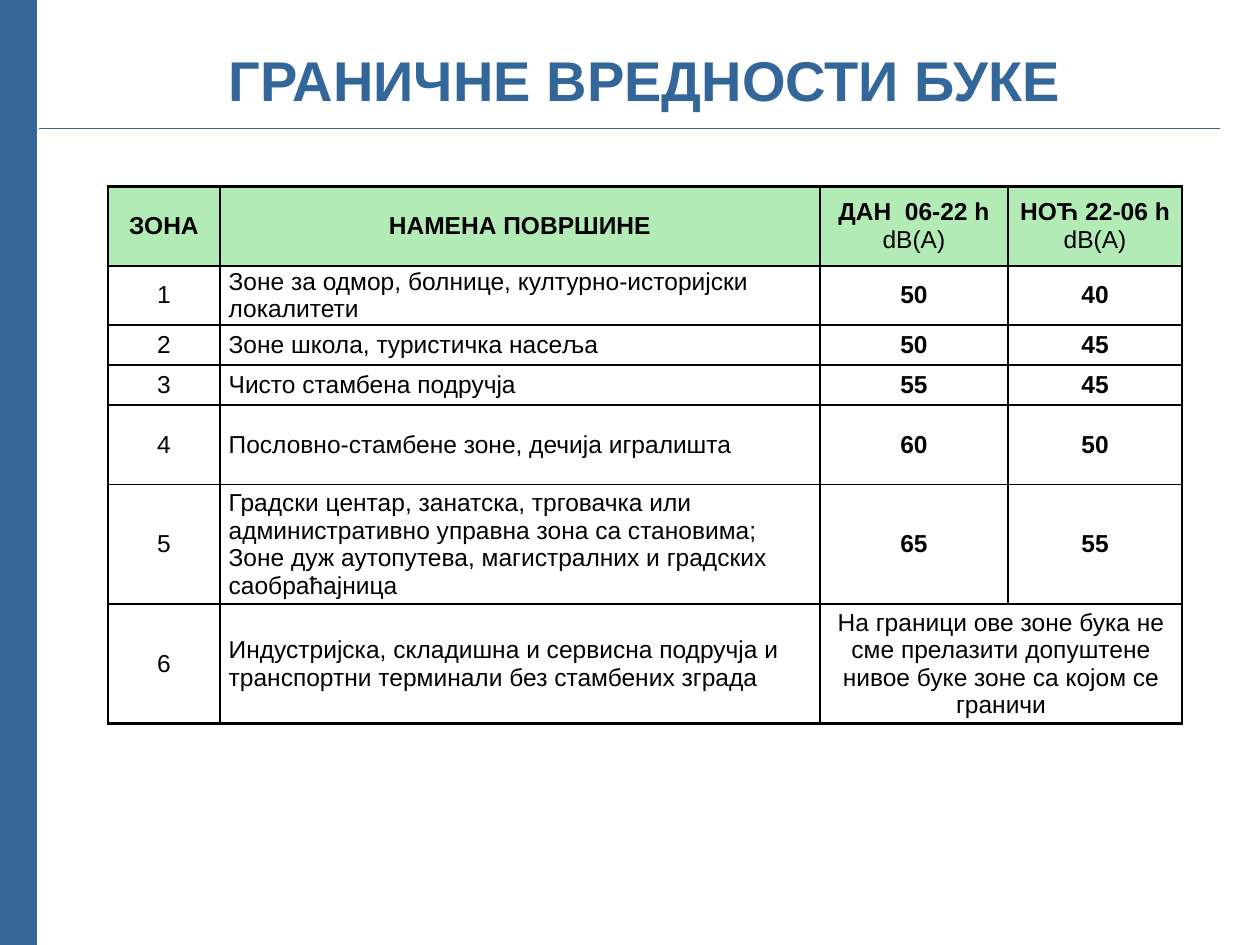
from dataclasses import dataclass

from lxml.etree import SubElement
from pptx import Presentation
from pptx.dml.color import RGBColor
from pptx.enum.shapes import MSO_CONNECTOR as Connector
from pptx.enum.text import MSO_ANCHOR as Anchor, PP_ALIGN as Align
from pptx.oxml import parse_xml
from pptx.oxml.ns import nsdecls, qn
from pptx.util import Cm, Pt


@dataclass(frozen=True)
class Theme:
    font: str = "Arial"
    accent: str = "336699"
    header: str = "B3EBB6"
    ink: str = "000000"
    title_size: float = 32
    table_size: float = 14
    rule: float = 0.75
    bar: float = 40
    inner_border: float = 1
    outer_border: float = 1.5


class NoisePage:
    def __init__(self, deck, theme):
        self.theme = theme
        self.page = deck.slides.add_slide(deck.slide_layouts[6])

    def style(self, para, size, color, bold, align=Align.CENTER):
        para.alignment = align
        font = para.font
        font.name, font.size, font.bold = self.theme.font, Pt(size), bold
        font.color.rgb = RGBColor.from_string(color)

    def title(self, text, left, top, width, height):
        box = self.page.shapes.add_textbox(Cm(left), Cm(top), Cm(width), Cm(height))
        frame = box.text_frame
        frame.word_wrap = True
        frame.vertical_anchor = Anchor.MIDDLE
        frame.text = text
        self.style(frame.paragraphs[0], self.theme.title_size, self.theme.accent, True)

    def line(self, x1, y1, x2, y2, width):
        line = self.page.shapes.add_connector(
            Connector.STRAIGHT, Cm(x1), Cm(y1), Cm(x2), Cm(y2))
        line.line.color.rgb = RGBColor.from_string(self.theme.accent)
        line.line.width = Pt(width)
        SubElement(line._element.spPr, qn("a:effectLst"))

    def borders(self, cell, outer_sides):
        properties = cell._tc.get_or_add_tcPr()
        for position, side in enumerate("LRTB"):
            width = self.theme.outer_border if side in outer_sides else self.theme.inner_border
            properties.insert(position, parse_xml(
                f'<a:ln{side} {nsdecls("a")} w="{Pt(width)}"><a:solidFill>'
                f'<a:srgbClr val="{self.theme.ink}"/></a:solidFill></a:ln{side}>'))

    def cell(self, cell, lines, bold_lines, align):
        cell.vertical_anchor = Anchor.MIDDLE
        cell.margin_left = cell.margin_right = Cm(0.18)
        cell.margin_top = cell.margin_bottom = 0
        cell.text_frame.text = "\n".join(lines)
        for number, para in enumerate(cell.text_frame.paragraphs):
            self.style(para, self.theme.table_size, self.theme.ink,
                       number < bold_lines, align)

    def table(self, rows, left, top, widths, heights, merged):
        table = self.page.shapes.add_table(
            len(heights), len(widths), Cm(left), Cm(top),
            Cm(sum(widths)), Cm(sum(heights))).table
        table.first_row = table.horz_banding = False
        for column, width in zip(table.columns, widths):
            column.width = Cm(width)
        for row, height in zip(table.rows, heights):
            row.height = Cm(height)
        start, end = merged
        table.cell(*start).merge(table.cell(*end))

        last_row, last_column = len(heights) - 1, len(widths) - 1
        for r, row in enumerate(rows):
            for c, text in enumerate(row):
                cell = table.cell(r, c)
                # Only the first line of the header and the levels are bold
                bold = r == 0 or (c >= 2 and not cell.is_merge_origin)
                align = Align.LEFT if r and c == 1 else Align.CENTER
                self.cell(cell, text.split("\n"), int(bold), align)
                if r == 0:
                    cell.fill.solid()
                    cell.fill.fore_color.rgb = RGBColor.from_string(self.theme.header)
                else:
                    cell.fill.background()
                right = c + (cell.span_width if cell.is_merge_origin else 1) - 1
                edges = {"L": c == 0, "R": right == last_column,
                         "T": r == 0, "B": r == last_row}
                self.borders(cell, [side for side, outer in edges.items() if outer])
        self.borders(table.cell(*end), "RB")


ROWS = [
    ("ЗОНА", "НАМЕНА ПОВРШИНЕ", "ДАН  06-22 h\ndB(A)", "НОЋ 22-06 h\ndB(A)"),
    ("1", "Зоне за одмор, болнице, културно-историјски локалитети", "50", "40"),
    ("2", "Зоне школа, туристичка насеља", "50", "45"),
    ("3", "Чисто стамбена подручја", "55", "45"),
    ("4", "Пословно-стамбене зоне, дечија игралишта", "60", "50"),
    ("5", "Градски центар, занатска, трговачка или административно управна зона "
          "са становима; Зоне дуж аутопутева, магистралних и градских саобраћајница",
     "65", "55"),
    ("6", "Индустријска, складишна и сервисна подручја и транспортни терминали "
          "без стамбених зграда",
     "На граници ове зоне бука не сме прелазити допуштене нивое буке зоне "
     "са којом се граничи"),
]


def main():
    deck = Presentation()
    deck.slide_width, deck.slide_height = Cm(25.4), Cm(19.05)
    theme = Theme()
    noise = NoisePage(deck, theme)

    # Title, side bar and rule
    noise.title("ГРАНИЧНЕ ВРЕДНОСТИ БУКЕ", 1.19, 0, 23.62, 3.18)
    noise.line(0.05, 0, 0.05, 19.05, theme.bar)
    noise.line(0.79, 2.59, 24.59, 2.59, theme.rule)

    # Limits by zone
    noise.table(ROWS, 2.18, 3.76,
                widths=[2.25, 12.1, 3.79, 3.51],
                heights=[1.6, 0.89, 0.81, 0.81, 1.6, 2.41, 2.41],
                merged=((6, 2), (6, 3)))
    deck.save("out.pptx")


if __name__ == "__main__":
    main()
